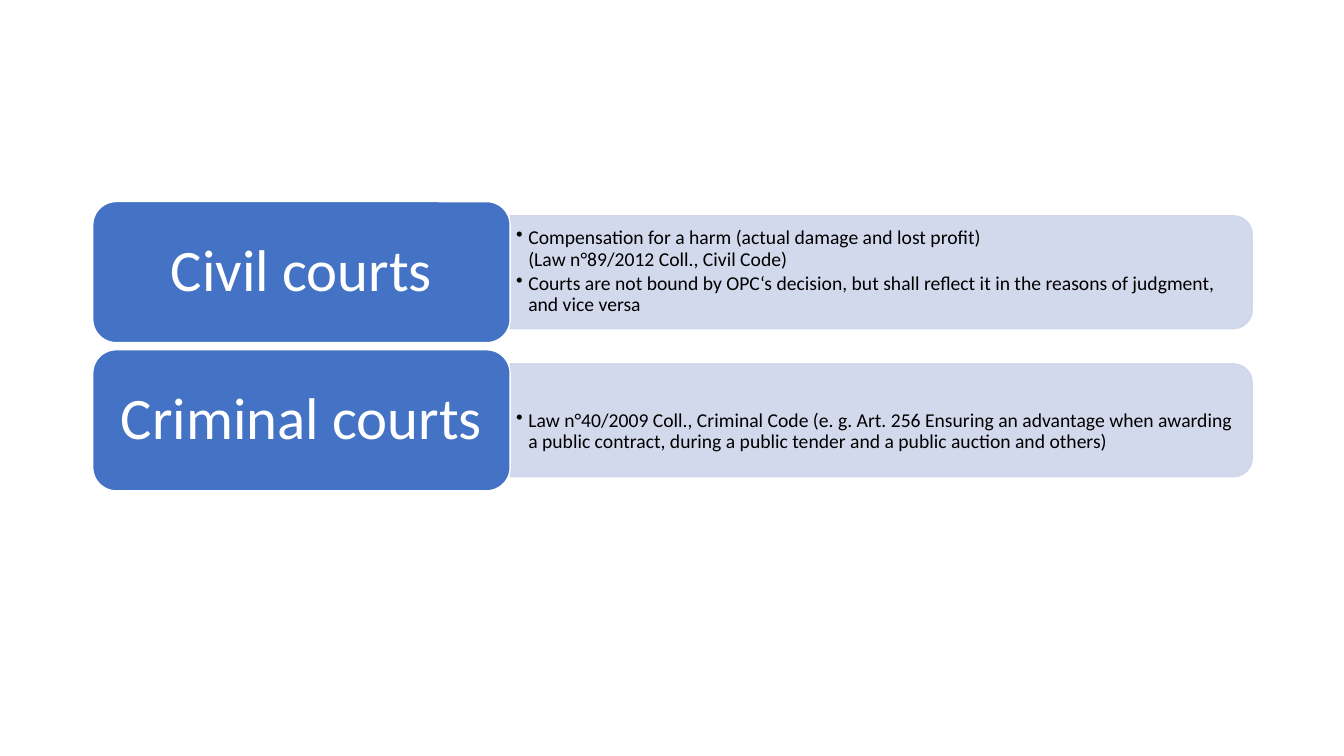
from copy import deepcopy
from dataclasses import dataclass

from lxml import etree
from pptx import Presentation
from pptx.dml.color import RGBColor
from pptx.enum.shapes import MSO_SHAPE
from pptx.enum.text import MSO_ANCHOR, PP_ALIGN
from pptx.oxml.ns import qn
from pptx.util import Emu, Pt

ROUNDED = MSO_SHAPE.ROUNDED_RECTANGLE
ROUNDED_END = MSO_SHAPE.ROUND_2_SAME_RECTANGLE
MIDDLE = MSO_ANCHOR.MIDDLE
LEFT, CENTER = PP_ALIGN.LEFT, PP_ALIGN.CENTER
PX = 9144  # 100 px to the inch


@dataclass(frozen=True)
class Theme:
    font: str = "Calibri"
    label_fill: RGBColor = RGBColor(0x44, 0x72, 0xC4)
    panel_fill: RGBColor = RGBColor(0xCF, 0xD5, 0xEA)
    white: RGBColor = RGBColor(0xFF, 0xFF, 0xFF)
    black: RGBColor = RGBColor(0, 0, 0)
    label_size: int = 42
    detail_size: int = 14


@dataclass(frozen=True)
class Box:
    left: int
    top: int
    width: int
    height: int

    def emu(self) -> list[Emu]:
        return [px(n) for n in (self.left, self.top, self.width, self.height)]


@dataclass(frozen=True)
class Court:
    name: str
    details: tuple[str, ...]
    detail_drop: int = 0  # extra space above the details


THEME = Theme()
FIRST_TOP, ROW_PITCH = 200, 147
COURTS = (
    Court("Civil courts", (
        "Compensation for a harm (actual damage and lost profit)\v"
        "(Law n°89/2012 Coll., Civil Code)",
        "Courts are not bound by OPC‘s decision, but shall reflect it in the "
        "reasons of judgment, and vice versa",
    )),
    Court("Criminal courts", (
        "Law n°40/2009 Coll., Criminal Code (e. g. Art. 256 Ensuring an advantage "
        "when awarding a public contract, during a public tender and a public "
        "auction and others)",
    ), detail_drop=24),
)


def px(length: int) -> Emu:
    return Emu(length * PX)


def write(frame, paragraphs: tuple[str, ...], *, size: int, color: RGBColor,
          align=LEFT, inset: tuple[int, int] = (6, 3), drop: int = 0,
          bullet_indent: int = 0) -> None:
    frame.word_wrap = True
    frame.vertical_anchor = MIDDLE
    frame.margin_left = frame.margin_right = px(inset[0])
    frame.margin_top, frame.margin_bottom = px(inset[1] + drop), px(inset[1])
    for index, text in enumerate(paragraphs):
        paragraph = frame.add_paragraph() if index else frame.paragraphs[0]
        paragraph.text = text
        paragraph.alignment = align
        paragraph.line_spacing = 0.9
        if bullet_indent:
            paragraph.space_after = Pt(2)
            properties = paragraph._p.get_or_add_pPr()
            properties.set("marL", str(px(bullet_indent)))
            properties.set("indent", str(-px(bullet_indent)))
            etree.SubElement(properties, qn("a:buChar"), char="•")
        for run in paragraph.runs:
            run.font.name = THEME.font
            run.font.size = Pt(size)
            run.font.color.rgb = color
        # Line breaks take the format of the text around them
        for line_break in paragraph._p.findall(qn("a:br")):
            line_break.append(deepcopy(paragraph.runs[0]._r.rPr))


def add_block(slide, kind, box: Box, fill: RGBColor, line: RGBColor,
              opacity: int = 100):
    block = slide.shapes.add_shape(kind, *box.emu())
    block.shadow.inherit = False
    block.fill.solid()
    block.fill.fore_color.rgb = fill
    block.line.color.rgb = line
    block.line.width = Pt(1)
    if opacity < 100:
        for color in block._element.spPr.iter(qn("a:srgbClr")):
            etree.SubElement(color, qn("a:alpha"), val=str(opacity * 1000))
    return block


def add_court(slide, court: Court, top: int) -> None:
    # Detail panel: turned so that its round corners face right
    panel = add_block(slide, ROUNDED_END, Box(818, top - 298, 112, 736),
                      THEME.panel_fill, THEME.panel_fill, opacity=90)
    panel.rotation = 90
    details = slide.shapes.add_textbox(*Box(506, top + 19, 731, 101).emu())
    write(details.text_frame, court.details, size=THEME.detail_size,
          color=THEME.black, drop=court.detail_drop, bullet_indent=12)

    # Court label
    label = add_block(slide, ROUNDED, Box(92, top, 414, 140),
                      THEME.label_fill, THEME.white)
    write(label.text_frame, (court.name,), size=THEME.label_size,
          color=THEME.white, align=CENTER, inset=(17, 9))


def main() -> None:
    deck = Presentation()
    deck.slide_width, deck.slide_height = px(1333), px(750)
    slide = deck.slides.add_slide(deck.slide_layouts[6])
    for row, court in enumerate(COURTS):
        add_court(slide, court, FIRST_TOP + row * ROW_PITCH)
    deck.save("out.pptx")


if __name__ == "__main__":
    main()
